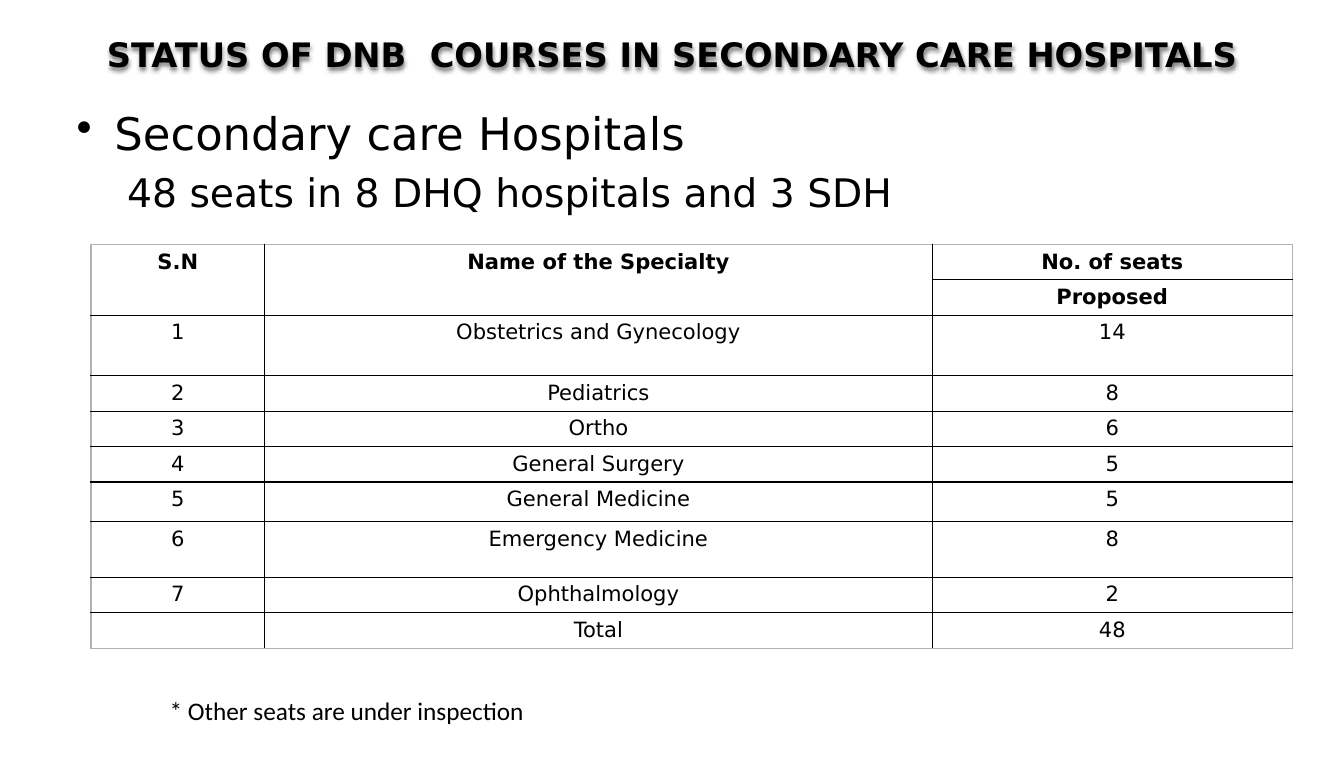
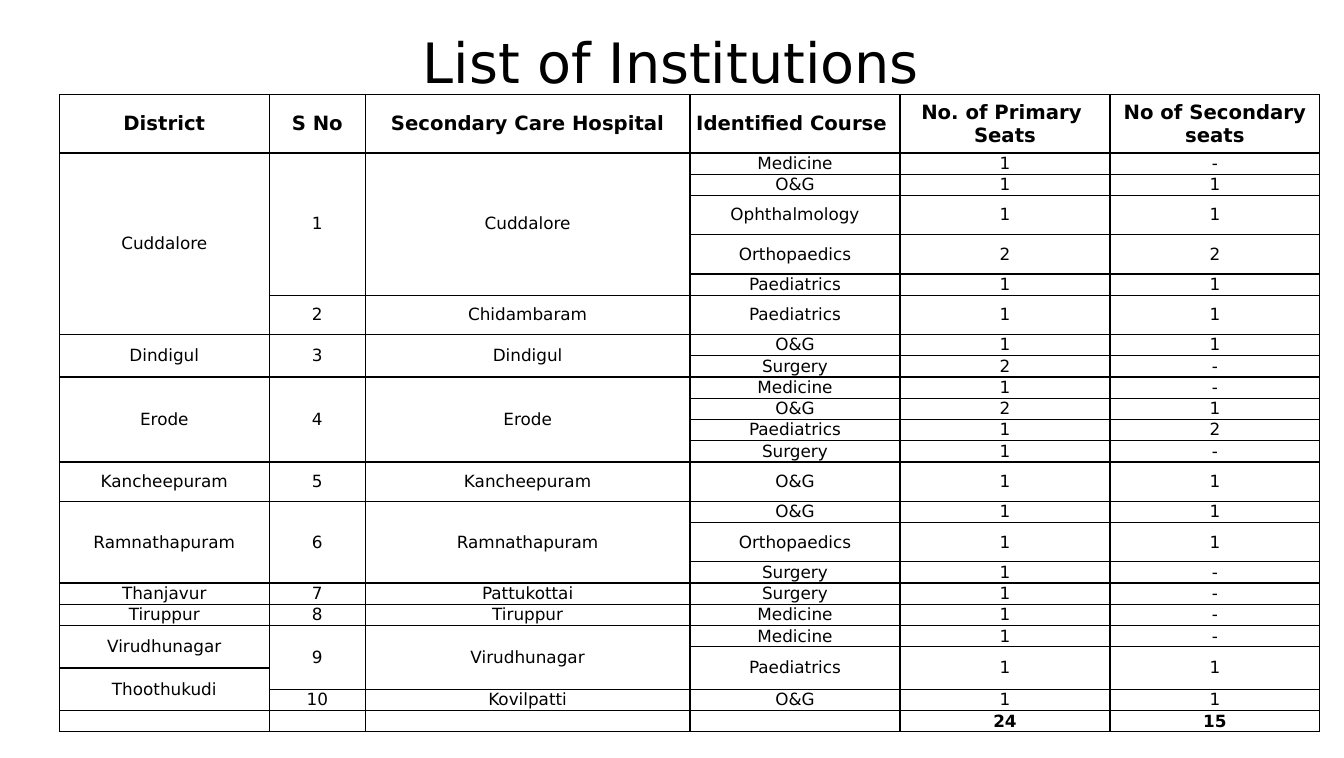
"""Build two slides on seats in secondary care hospitals."""
from dataclasses import dataclass

from lxml import etree
from pptx import Presentation
from pptx.dml.color import RGBColor
from pptx.enum.text import MSO_ANCHOR, MSO_AUTO_SIZE, PP_ALIGN
from pptx.oxml.ns import qn
from pptx.util import Pt

TOP, MIDDLE = MSO_ANCHOR.TOP, MSO_ANCHOR.MIDDLE
LEFT, CENTER = PP_ALIGN.LEFT, PP_ALIGN.CENTER
NO_AUTOFIT, GROW = MSO_AUTO_SIZE.NONE, MSO_AUTO_SIZE.SHAPE_TO_FIT_TEXT
TITLE_ONLY = 5


@dataclass(frozen=True)
class Theme:
    """Colours, fonts and type sizes of the slides."""
    ink: str = "000000"
    paper: str = "FFFFFF"
    outline: str = "B2B2B2"
    font: str = "DejaVu Sans"
    note_font: str = "Calibri"
    title: float = 39.6
    heading: float = 24
    bullet: float = 32
    sub_bullet: float = 28
    note: float = 18
    seat_cell: float = 15
    list_header: float = 14
    list_cell: float = 12
    border: float = 1


THEME = Theme()

SEAT_ROWS = [
    ("S.N", "Name of the Specialty", "No. of seats"),
    (None, None, "Proposed"),
    ("1", "Obstetrics and Gynecology", "14"),
    ("2", "Pediatrics", "8"),
    ("3", "Ortho", "6"),
    ("4", "General Surgery", "5"),
    ("5", "General Medicine", "5"),
    ("6", "Emergency Medicine", "8"),
    ("7", "Ophthalmology", "2"),
    ("", "Total", "48"),
]
SEAT_WIDTHS = [123.8, 475.6, 256.7]
SEAT_ROW_HEIGHT = 25.2
SEAT_TALL_ROWS = {2: 43.2, 6: 28.2, 7: 39.6}

INSTITUTION_ROWS = [
    ("District", "S No", "Secondary Care Hospital", "Identified Course ",
     "No. of Primary  Seats", "No of Secondary seats"),
    ("Cuddalore", "1", "Cuddalore", "Medicine", "1", "-"),
    (None, None, None, "O&G", "1", "1"),
    (None, None, None, "Ophthalmology", "1", "1"),
    (None, None, None, "Orthopaedics", "2", "2"),
    (None, None, None, "Paediatrics", "1", "1"),
    (None, "2", "Chidambaram", "Paediatrics", "1", "1"),
    ("Dindigul", "3", "Dindigul", "O&G", "1", "1"),
    (None, None, None, "Surgery", "2", "-"),
    ("Erode", "4", "Erode", "Medicine", "1", "-"),
    (None, None, None, "O&G", "2", "1"),
    (None, None, None, "Paediatrics", "1", "2"),
    (None, None, None, "Surgery", "1", "-"),
    ("Kancheepuram", "5", "Kancheepuram", "O&G", "1", "1"),
    ("Ramnathapuram", "6", "Ramnathapuram", "O&G", "1", "1"),
    (None, None, None, "Orthopaedics", "1", "1"),
    (None, None, None, "Surgery", "1", "-"),
    ("Thanjavur", "7", "Pattukottai", "Surgery", "1", "-"),
    ("Tiruppur", "8", "Tiruppur", "Medicine", "1", "-"),
    ("Virudhunagar", "9", "Virudhunagar", "Medicine", "1", "-"),
    (None, None, None, "Paediatrics", "1", "1"),
    ("Thoothukudi", None, None, None, None, None),
    (None, "10", "Kovilpatti", "O&G", "1", "1"),
    ("", "", "", "", "24", "15"),
]
INSTITUTION_WIDTHS = [149.6, 68.4, 231.4, 149.6, 149.6, 149.6]
INSTITUTION_ROW_HEIGHT = 15.15
INSTITUTION_TALL_ROWS = {0: 41.6, **dict.fromkeys((3, 4, 6, 13, 15), 28)}


def write_text(paragraph, text, *, size, bold=False, font=THEME.font,
               align=LEFT, space_before=0):
    """Put one formatted run of text in a paragraph."""
    paragraph.alignment = align
    paragraph.space_before = Pt(space_before)
    if text:
        run = paragraph.add_run()
        run.text = text
        run.font.name = font
        run.font.size = Pt(size)
        run.font.bold = bold
        run.font.color.rgb = RGBColor.from_string(THEME.ink)
    else:
        etree.SubElement(paragraph._p, qn("a:endParaRPr"), sz=str(round(size * 100)))


def add_shadow(shape):
    """Give the text of an unfilled shape a soft shadow below."""
    effects = etree.SubElement(shape._element.spPr, qn("a:effectLst"))
    shadow = etree.SubElement(effects, qn("a:outerShdw"), blurRad=str(Pt(3)),
                              dist=str(Pt(2)), dir="5400000", rotWithShape="0")
    color = etree.SubElement(shadow, qn("a:srgbClr"), val=THEME.ink)
    etree.SubElement(color, qn("a:alpha"), val="50000")


def place_title(slide, text, box, *, size, bold=False):
    """Move and format the title placeholder."""
    title = slide.shapes.title
    title.left, title.top, title.width, title.height = map(Pt, box)
    frame = title.text_frame
    frame.auto_size = NO_AUTOFIT
    frame.word_wrap = True
    frame.vertical_anchor = MIDDLE
    write_text(frame.paragraphs[0], text, size=size, bold=bold, align=CENTER)
    return title


def add_text_frame(slide, box, auto_size=NO_AUTOFIT):
    """Add a wrapping text box and return its text frame."""
    frame = slide.shapes.add_textbox(*map(Pt, box)).text_frame
    frame.word_wrap = True
    frame.auto_size = auto_size
    return frame


def add_bullets(slide, box, heading, detail):
    """Add a bulleted heading with an indented line under it."""
    frame = add_text_frame(slide, box)
    first, second = frame.paragraphs[0], frame.add_paragraph()
    write_text(first, heading, size=THEME.bullet, space_before=0.2 * THEME.bullet)
    write_text(second, detail, size=THEME.sub_bullet,
               space_before=0.2 * THEME.sub_bullet)
    second.level = 1
    for paragraph, margin, indent in ((first, 27, -27), (second, 36, 0)):
        properties = paragraph._p.get_or_add_pPr()
        properties.set("marL", str(Pt(margin)))
        properties.set("indent", str(Pt(indent)))
    etree.SubElement(first._p.pPr, qn("a:buChar"), char="•")


def set_borders(cell, colors):
    """Draw the left, right, top and bottom borders of a cell."""
    properties = cell._tc.get_or_add_tcPr()
    for position, (side, color) in enumerate(zip("LRTB", colors)):
        line = etree.Element(qn(f"a:ln{side}"), w=str(Pt(THEME.border)))
        fill = etree.SubElement(line, qn("a:solidFill"))
        etree.SubElement(fill, qn("a:srgbClr"), val=color)
        properties.insert(position, line)


def merge_down(table, rows):
    """Merge each cell with the None entries that follow below it."""
    for column in range(len(rows[0])):
        start = 0
        for index in range(1, len(rows) + 1):
            if index == len(rows) or rows[index][column] is not None:
                if index - start > 1:
                    table.cell(start, column).merge(table.cell(index - 1, column))
                start = index


def add_grid(slide, rows, left, top, widths, heights, *, size, header_size,
             header_rows, margins, anchor=TOP, outline=THEME.ink, bold_total=False):
    """Add a bordered table of centred text."""
    shape = slide.shapes.add_table(len(rows), len(widths), Pt(left), Pt(top),
                                   Pt(sum(widths)), Pt(sum(heights)))
    table = shape.table
    table.first_row = table.horz_banding = False
    for column, width in zip(table.columns, widths):
        column.width = Pt(width)
    for row, height in zip(table.rows, heights):
        row.height = Pt(height)
    last_row, last_column = len(rows) - 1, len(widths) - 1
    horizontal, vertical = map(Pt, margins)
    for y, values in enumerate(rows):
        header = y < header_rows
        for x, text in enumerate(values):
            cell = table.cell(y, x)
            cell.margin_left = cell.margin_right = horizontal
            cell.margin_top = cell.margin_bottom = vertical
            cell.vertical_anchor = anchor
            cell.fill.solid()
            cell.fill.fore_color.rgb = RGBColor.from_string(THEME.paper)
            edges = (x == 0, x == last_column, y == 0, y == last_row)
            set_borders(cell, [outline if edge else THEME.ink for edge in edges])
            write_text(cell.text_frame.paragraphs[0], text, align=CENTER,
                       size=header_size if header else size,
                       bold=header or (bold_total and y == last_row))
    merge_down(table, rows)


def row_heights(rows, usual, exceptions):
    """List the row heights from the usual one and its exceptions."""
    return [exceptions.get(index, usual) for index in range(len(rows))]


def build_status_slide(slide, left, top, width):
    """Fill the slide on seats by specialty."""
    title = place_title(slide, "STATUS OF DNB  COURSES IN SECONDARY CARE HOSPITALS",
                        (left, top, width, 76.3), size=THEME.heading, bold=True)
    add_shadow(title)
    add_bullets(slide, (left + 47.5, top + 72, width - 95.8, 100),
                "Secondary care Hospitals", "48 seats in 8 DHQ hospitals and 3 SDH")
    add_grid(slide, SEAT_ROWS, left + 64.8, top + 174.2, SEAT_WIDTHS,
             row_heights(SEAT_ROWS, SEAT_ROW_HEIGHT, SEAT_TALL_ROWS),
             size=THEME.seat_cell, header_size=THEME.seat_cell, header_rows=2,
             margins=(7.2, 3.6), outline=THEME.outline)
    note = add_text_frame(slide, (left + 113.8, top + 491.8, 383, 29), GROW)
    write_text(note.paragraphs[0], "* Other seats are under inspection",
               size=THEME.note, font=THEME.note_font)


def build_institutions_slide(slide, left, top, width):
    """Fill the slide on seats by institution."""
    place_title(slide, "List of Institutions ",
                (left + 59, top + 21.6, width - 106.6, 44.6), size=THEME.title)
    add_grid(slide, INSTITUTION_ROWS, left + 42.3, top + 67.4, INSTITUTION_WIDTHS,
             row_heights(INSTITUTION_ROWS, INSTITUTION_ROW_HEIGHT,
                         INSTITUTION_TALL_ROWS),
             size=THEME.list_cell, header_size=THEME.list_header, header_rows=1,
             margins=(0.7, 0), anchor=MIDDLE, bold_total=True)


def main():
    """Build and save the presentation."""
    presentation = Presentation()
    presentation.slide_width, presentation.slide_height = Pt(957.6), Pt(540)
    layout = presentation.slide_layouts[TITLE_ONLY]
    for build in (build_status_slide, build_institutions_slide):
        build(presentation.slides.add_slide(layout), 0, 0, 957.6)
    presentation.save("out.pptx")


if __name__ == "__main__":
    main()
